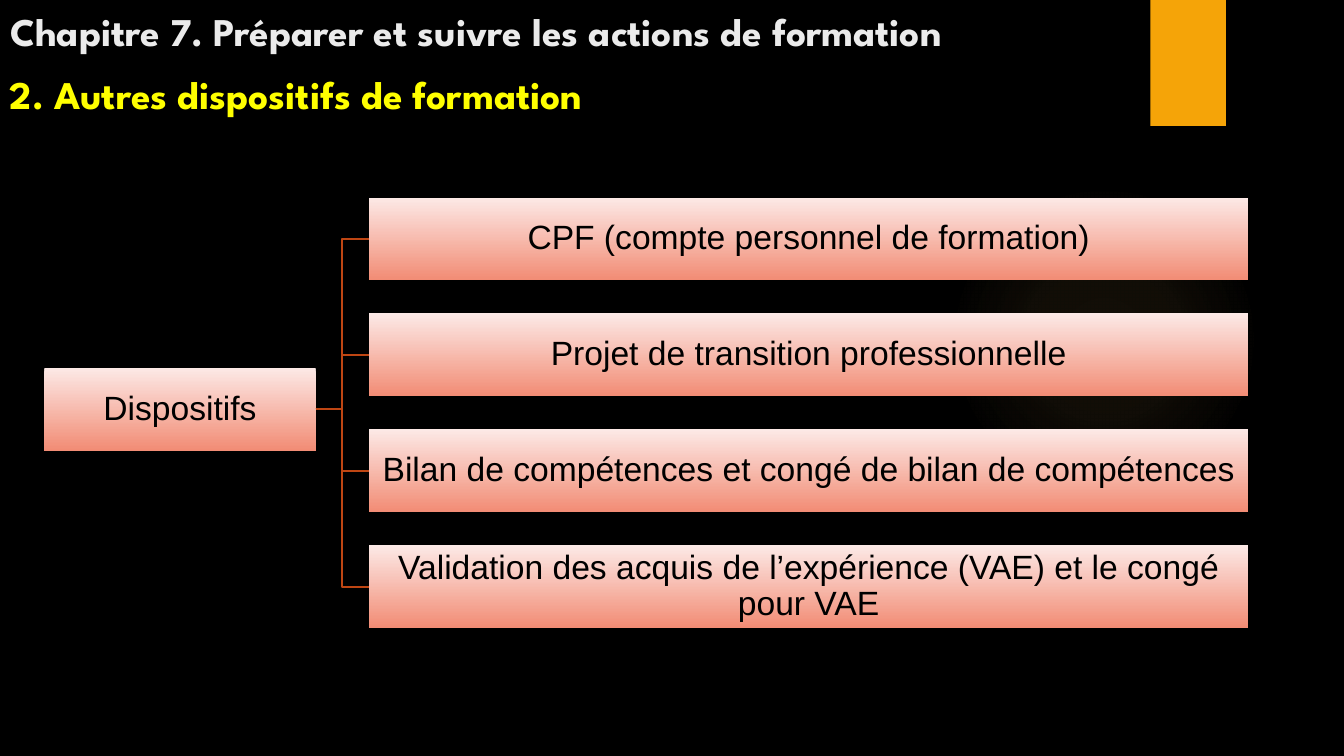
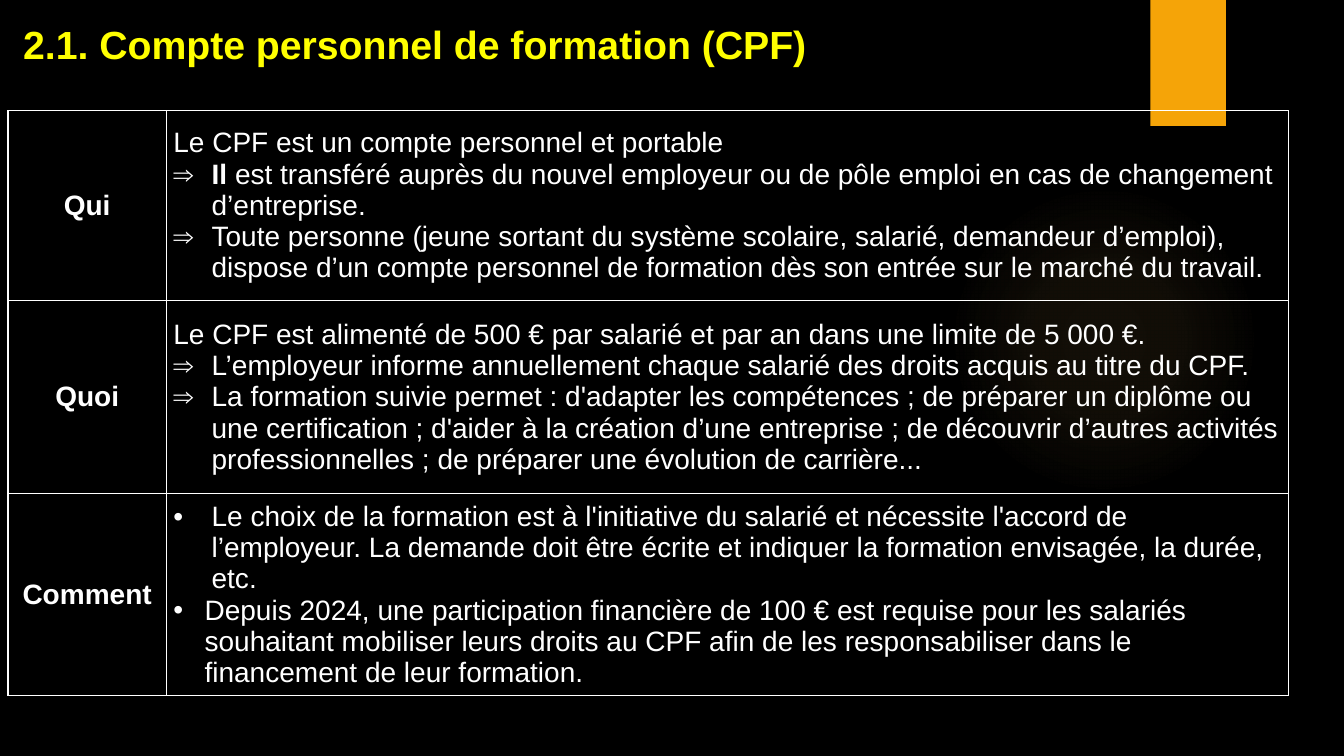
from lxml import etree
from pptx import Presentation, oxml
from pptx import util as u
from pptx.dml import color
from pptx.enum import shapes, text
from pptx.oxml import ns

BLACK = color.RGBColor(0x00, 0x00, 0x00)
WHITE = color.RGBColor(0xFF, 0xFF, 0xFF)
SILVER = color.RGBColor(0xEB, 0xEB, 0xEB)
YELLOW = color.RGBColor(0xFF, 0xFF, 0x00)
ORANGE = color.RGBColor(0xF5, 0xA4, 0x08)
GLOW = color.RGBColor(0xFA, 0xC9, 0x6A)
BOX_TOP = color.RGBColor(0xFC, 0xE9, 0xE6)
BOX_BOTTOM = color.RGBColor(0xF2, 0x8C, 0x75)
LINK = color.RGBColor(0xBF, 0x46, 0x13)
HEADING_FONT = "League Spartan"
BODY_FONT = "Arial"


def add_run(paragraph, words, size, font_name, font_color, bold=False):
    run = paragraph.add_run()
    run.text = words
    run.font.size = u.Pt(size)
    run.font.name = font_name
    run.font.color.rgb = font_color
    run.font.bold = bold


def place_heading(shape, box, words, font_name, font_color, anchor):
    shape.left, shape.top, shape.width, shape.height = [u.Inches(value) for value in box]
    frame = shape.text_frame
    frame.word_wrap = True
    frame.auto_size = text.MSO_AUTO_SIZE.NONE
    frame.vertical_anchor = anchor
    paragraph = frame.paragraphs[0]
    paragraph.alignment = text.PP_ALIGN.LEFT
    add_run(paragraph, words, 28, font_name, font_color, True)


presentation = Presentation()
presentation.slide_width = u.Inches(13.33)
presentation.slide_height = u.Inches(7.5)
title_only = presentation.slide_layouts[5]
master = presentation.slide_master
master.background.fill.solid()
master.background.fill.fore_color.rgb = BLACK

slide = presentation.slides.add_slide(title_only)

glow = slide.shapes.add_shape(
    shapes.MSO_SHAPE.OVAL, u.Inches(9.41), u.Inches(1.83), u.Inches(3.08), u.Inches(3.08))
band = slide.shapes.add_shape(
    shapes.MSO_SHAPE.RECTANGLE, u.Inches(11.41), u.Inches(0), u.Inches(0.75), u.Inches(1.25))
band.fill.solid()
band.fill.fore_color.rgb = ORANGE
glow.fill.background()
stops = "".join(
    f'<a:gs pos="{position}000"><a:srgbClr val="{GLOW}"><a:alpha val="{alpha}000"/></a:srgbClr></a:gs>'
    for position, alpha in ((0, 7), (36, 6), (69, 0)))
glow_fill = oxml.parse_xml(
    f'<a:gradFill {ns.nsdecls("a")}><a:gsLst>{stops}</a:gsLst><a:path path="circle">'
    '<a:fillToRect l="50000" t="50000" r="50000" b="50000"/></a:path></a:gradFill>')
glow_properties = glow.element.spPr
glow_properties.replace(glow_properties.find(ns.qn("a:noFill")), glow_fill)
for shape in (glow, band):
    shape.line.fill.background()
    shape.shadow.inherit = False
    master.shapes.element.append(shape.element)

place_heading(slide.shapes.title, (0, 0.08, 12.9, 0.51),
              "Chapitre 7. Préparer et suivre les actions de formation",
              HEADING_FONT, SILVER, text.MSO_ANCHOR.BOTTOM)
subtitle = slide.shapes.add_textbox(0, 0, 0, 0)
place_heading(subtitle, (0, 0.5, 12.9, 0.71), "2. Autres dispositifs de formation",
              HEADING_FONT, YELLOW, text.MSO_ANCHOR.BOTTOM)

schemes = [
    "CPF (compte personnel de formation)",
    "Projet de transition professionnelle",
    "Bilan de compétences et congé de bilan de compétences",
    "Validation des acquis de l’expérience (VAE) et le congé pour VAE",
]
boxes = [(0.44, 3.65, 2.69, "Dispositifs")]
boxes += [(3.66, 1.96 + 1.15 * index, 8.72, scheme) for index, scheme in enumerate(schemes)]
root = None
for left, top, width, label in boxes:
    box = slide.shapes.add_shape(
        shapes.MSO_SHAPE.RECTANGLE, u.Inches(left), u.Inches(top), u.Inches(width), u.Inches(0.82))
    box.shadow.inherit = False
    box.line.fill.background()
    box.fill.gradient()
    box.fill.gradient_angle = 270
    for stop, stop_color, position in zip(box.fill.gradient_stops, (BOX_TOP, BOX_BOTTOM), (0, 1)):
        stop.color.rgb = stop_color
        stop.position = position
    frame = box.text_frame
    frame.word_wrap = True
    frame.vertical_anchor = text.MSO_ANCHOR.MIDDLE
    frame.margin_left = frame.margin_right = u.Inches(0.02)
    frame.margin_top = frame.margin_bottom = u.Inches(0.02)
    paragraph = frame.paragraphs[0]
    paragraph.alignment = text.PP_ALIGN.CENTER
    paragraph.line_spacing = 0.9
    add_run(paragraph, label, 24, BODY_FONT, BLACK)
    if root is None:
        root = box
        continue
    connector = slide.shapes.add_connector(shapes.MSO_CONNECTOR.ELBOW, 0, 0, 0, 0)
    connector.begin_connect(root, 3)
    connector.end_connect(box, 1)
    connector.line.color.rgb = LINK
    connector.line.width = u.Pt(1.5)
    etree.SubElement(connector.element.spPr, ns.qn("a:effectLst"))

slide = presentation.slides.add_slide(title_only)
place_heading(slide.shapes.title, (0.13, 0.15, 12.65, 0.57),
              "2.1. Compte personnel de formation (CPF)",
              BODY_FONT, YELLOW, text.MSO_ANCHOR.MIDDLE)

rows = [
    (1.88, "Qui", [
        (None, 0, [("Le CPF est un compte personnel et portable", False)]),
        ("⇒", 0.38, [
            ("Il ", True),
            ("est transféré auprès du nouvel employeur ou de pôle emploi en cas de changement "
             "d’entreprise.", False)]),
        ("⇒", 0.38, [
            ("Toute personne (jeune sortant du système scolaire, salarié, demandeur d’emploi), "
             "dispose d’un compte personnel de formation dès son entrée sur le marché du travail.",
             False)]),
    ]),
    (1.92, "Quoi", [
        (None, 0, [
            ("Le CPF est alimenté de 500 € par salarié et par an dans une limite de 5 000 €.",
             False)]),
        ("⇒", 0.38, [
            ("L’employeur informe annuellement chaque salarié des droits acquis au titre du CPF.",
             False)]),
        ("⇒", 0.38, [
            ("La formation suivie permet : d'adapter les compétences ; de préparer un diplôme ou "
             "une certification ; d'aider à la création d’une entreprise ; de découvrir d’autres "
             "activités professionnelles ; de préparer une évolution de carrière...", False)]),
    ]),
    (2, "Comment", [
        ("•", 0.38, [
            ("Le choix de la formation est à l'initiative du salarié et nécessite l'accord de "
             "l’employeur. La demande doit être écrite et indiquer la formation envisagée, "
             "la durée, etc.", False)]),
        ("•", 0.31, [
            ("Depuis 2024, une participation financière de 100 € est requise pour les salariés "
             "souhaitant mobiliser leurs droits au CPF afin de les responsabiliser dans le "
             "financement de leur formation.", False)]),
    ]),
]
table = slide.shapes.add_table(
    len(rows), 2, u.Inches(0.08), u.Inches(1.1), u.Inches(12.7), u.Inches(5.8)).table
table.first_row = False
table.horz_banding = False
for column, width in zip(table.columns, (1.57, 11.13)):
    column.width = u.Inches(width)

for row, (height, heading, details) in zip(table.rows, rows):
    row.height = u.Inches(height)
    contents = [[(None, 0, [(heading, True)])], details]
    alignments = (text.PP_ALIGN.CENTER, text.PP_ALIGN.LEFT)
    for cell, paragraphs, alignment in zip(row.cells, contents, alignments):
        cell.vertical_anchor = text.MSO_ANCHOR.MIDDLE
        cell.margin_left = cell.margin_right = u.Inches(0.07)
        cell.margin_top = cell.margin_bottom = 0
        cell_properties = cell._tc.get_or_add_tcPr()
        for side in ("lnL", "lnR", "lnT", "lnB"):
            cell_properties.append(oxml.parse_xml(
                f'<a:{side} {ns.nsdecls("a")} w="{u.Pt(1)}"><a:solidFill>'
                f'<a:srgbClr val="{WHITE}"/></a:solidFill></a:{side}>'))
        cell.fill.background()
        for index, (bullet, indent, runs) in enumerate(paragraphs):
            frame = cell.text_frame
            paragraph = frame.add_paragraph() if index else frame.paragraphs[0]
            paragraph.alignment = alignment
            if bullet:
                properties = paragraph._p.get_or_add_pPr()
                properties.set("marL", str(u.Inches(indent)))
                properties.set("indent", str(-u.Inches(indent)))
                etree.SubElement(properties, ns.qn("a:buFont"), typeface=BODY_FONT)
                etree.SubElement(properties, ns.qn("a:buChar"), char=bullet)
            for words, bold in runs:
                add_run(paragraph, words, 20, BODY_FONT, WHITE, bold)

presentation.save("out.pptx")
